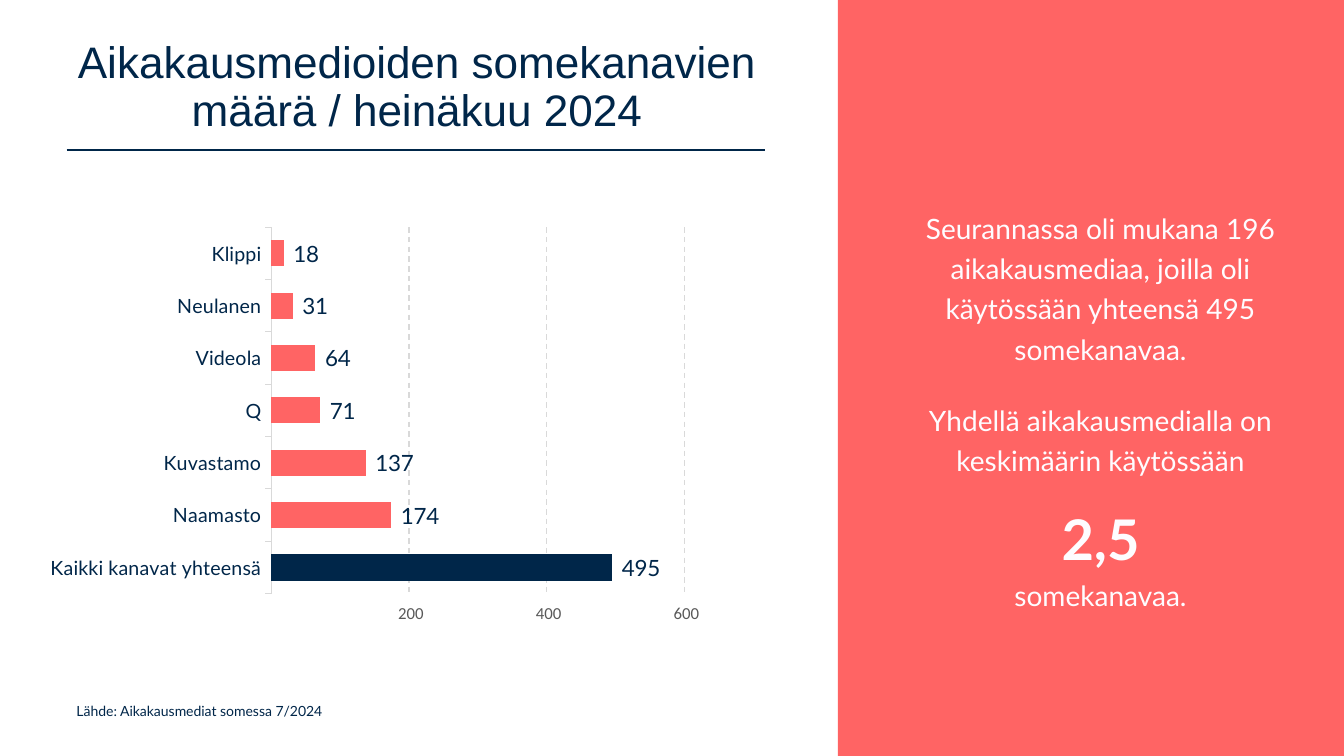
"""Build a slide on the number of social media channels of magazines."""
import lxml.etree
import pptx
import pptx.chart.data
import pptx.dml.color
import pptx.enum.chart
import pptx.enum.dml
import pptx.enum.shapes
import pptx.enum.text
import pptx.oxml
import pptx.oxml.ns
import pptx.util

Inches = pptx.util.Inches
Pt = pptx.util.Pt
RGBColor = pptx.dml.color.RGBColor
CENTER = pptx.enum.text.PP_ALIGN.CENTER
MIDDLE = pptx.enum.text.MSO_ANCHOR.MIDDLE

NAVY = RGBColor(0x00, 0x26, 0x49)
CORAL = RGBColor(0xFF, 0x64, 0x64)
OFF_WHITE = RGBColor(0xFE, 0xFC, 0xFF)
GRID_GREY = RGBColor(0xD9, 0xD9, 0xD9)
LABEL_GREY = RGBColor(0x59, 0x59, 0x59)
NUMBER_FORMAT = r"#\ ##0;\-#\ ##0;;@"

CHANNELS = {
    "Kaikki kanavat yhteensä": 495,
    "Naamasto": 174,
    "Kuvastamo": 137,
    "Q": 71,
    "Videola": 64,
    "Neulanen": 31,
    "Klippi": 18,
}


def set_font(font, color, **values):
    font.color.rgb = color
    for name, value in values.items():
        setattr(font, name, value)


deck = pptx.Presentation()
deck.slide_width = Inches(13.33)
deck.slide_height = Inches(7.5)
page = deck.slides.add_slide(deck.slide_layouts[5])

panel = page.shapes.add_shape(
    pptx.enum.shapes.MSO_SHAPE.RECTANGLE, Inches(8.31), 0, Inches(5.02), Inches(7.5)
)
panel.shadow.inherit = False
panel.fill.solid()
panel.fill.fore_color.rgb = CORAL
panel.line.fill.background()

title = page.shapes.title
title_format = {
    "left": Inches(0.66), "top": Inches(0.25),
    "width": Inches(6.95), "height": Inches(1.25),
}
for name, value in title_format.items():
    setattr(title, name, value)
title.text_frame.text = "Aikakausmedioiden somekanavien määrä / heinäkuu 2024"
title.text_frame.word_wrap = True
title.text_frame.vertical_anchor = MIDDLE
para = title.text_frame.paragraphs[0]
para.alignment = CENTER
para.line_spacing = 0.9
set_font(para.font, NAVY, name="Arial", size=Pt(31.5))

rule = page.shapes.add_connector(
    pptx.enum.shapes.MSO_CONNECTOR.STRAIGHT,
    Inches(0.66), Inches(1.49), Inches(7.59), Inches(1.49),
)
rule.line.color.rgb = NAVY
rule.line.width = Pt(1)
lxml.etree.SubElement(rule._element.spPr, pptx.oxml.ns.qn("a:effectLst"))

source_box = page.shapes.add_textbox(Inches(0.66), Inches(6.92), Inches(6.58), Inches(0.44))
source_box.text_frame.word_wrap = True
source_box.text_frame.text = "Lähde: Aikakausmediat somessa 7/2024"
set_font(source_box.text_frame.paragraphs[0].font, NAVY, name="Lato", size=Pt(10))

summary_box = page.shapes.add_textbox(Inches(9.04), Inches(1.5), Inches(3.75), Inches(5.1))
summary = summary_box.text_frame
summary.word_wrap = True
summary.vertical_anchor = MIDDLE
summary.text = (
    "Seurannassa oli mukana 196 aikakausmediaa, joilla oli käytössään "
    "yhteensä 495 somekanavaa.\n"
    "Yhdellä aikakausmedialla on keskimäärin käytössään\n"
    "2,5\vsomekanavaa."
)
for para, space in zip(summary.paragraphs, (0, 22, 10)):
    para.alignment = CENTER
    para.line_spacing = 1.2
    para.space_before = Pt(space)
    for span in para.runs:
        set_font(span.font, OFF_WHITE, name="Lato", size=Pt(20))
average = summary.paragraphs[2].runs[0]
set_font(average.font, OFF_WHITE, size=Pt(40), bold=True)

chart_data = pptx.chart.data.CategoryChartData()
chart_data.categories = list(CHANNELS)
chart_data.add_series("Somekanavat", list(CHANNELS.values()))
chart = page.shapes.add_chart(
    pptx.enum.chart.XL_CHART_TYPE.BAR_CLUSTERED,
    0, Inches(1.88), Inches(8.31), Inches(4.34), chart_data,
).chart
chart.has_legend = False
chart.has_title = False
set_font(chart.font, NAVY, name="Calibri", size=Pt(10))

plot = chart.plots[0]
plot.gap_width = 100
plot.vary_by_categories = False
bars = plot.series[0]
total_bar = bars.points[0]
for part, color in ((bars, CORAL), (total_bar, NAVY)):
    part.format.fill.solid()
    part.format.fill.fore_color.rgb = color

labels = bars.data_labels
label_format = {
    "show_value": True,
    "position": pptx.enum.chart.XL_LABEL_POSITION.OUTSIDE_END,
    "number_format": NUMBER_FORMAT,
    "number_format_is_linked": False,
}
for name, value in label_format.items():
    setattr(labels, name, value)
set_font(labels.font, NAVY, name="Lato", size=Pt(16))

channel_axis = chart.category_axis
channel_axis.major_tick_mark = pptx.enum.chart.XL_TICK_MARK.OUTSIDE
channel_axis.format.line.color.rgb = GRID_GREY
channel_axis.format.line.width = Pt(0.75)
set_font(channel_axis.tick_labels.font, NAVY, name="Lato", size=Pt(14))

count_axis = chart.value_axis
axis_format = {
    "minimum_scale": 0, "maximum_scale": 600, "major_unit": 200,
    "has_major_gridlines": True,
    "major_tick_mark": pptx.enum.chart.XL_TICK_MARK.OUTSIDE,
}
for name, value in axis_format.items():
    setattr(count_axis, name, value)
count_axis.format.line.fill.background()
count_axis.tick_labels.number_format = NUMBER_FORMAT
count_axis.tick_labels.number_format_is_linked = False
set_font(count_axis.tick_labels.font, LABEL_GREY, name="Calibri", size=Pt(12))
gridline = count_axis.major_gridlines.format.line
gridline.color.rgb = GRID_GREY
gridline.width = Pt(1)
gridline.dash_style = pptx.enum.dml.MSO_LINE.DASH

plot_area = chart._chartSpace.chart.plotArea
for old_layout in plot_area.findall(pptx.oxml.ns.qn("c:layout")):
    plot_area.remove(old_layout)
plot_area.insert(0, pptx.oxml.parse_xml(
    f'<c:layout {pptx.oxml.ns.nsdecls("c")}><c:manualLayout>'
    '<c:layoutTarget val="inner"/><c:xMode val="edge"/><c:yMode val="edge"/>'
    '<c:x val="0.324"/><c:y val="0.086"/><c:w val="0.493"/><c:h val="0.838"/>'
    "</c:manualLayout></c:layout>"
))

deck.save("out.pptx")
